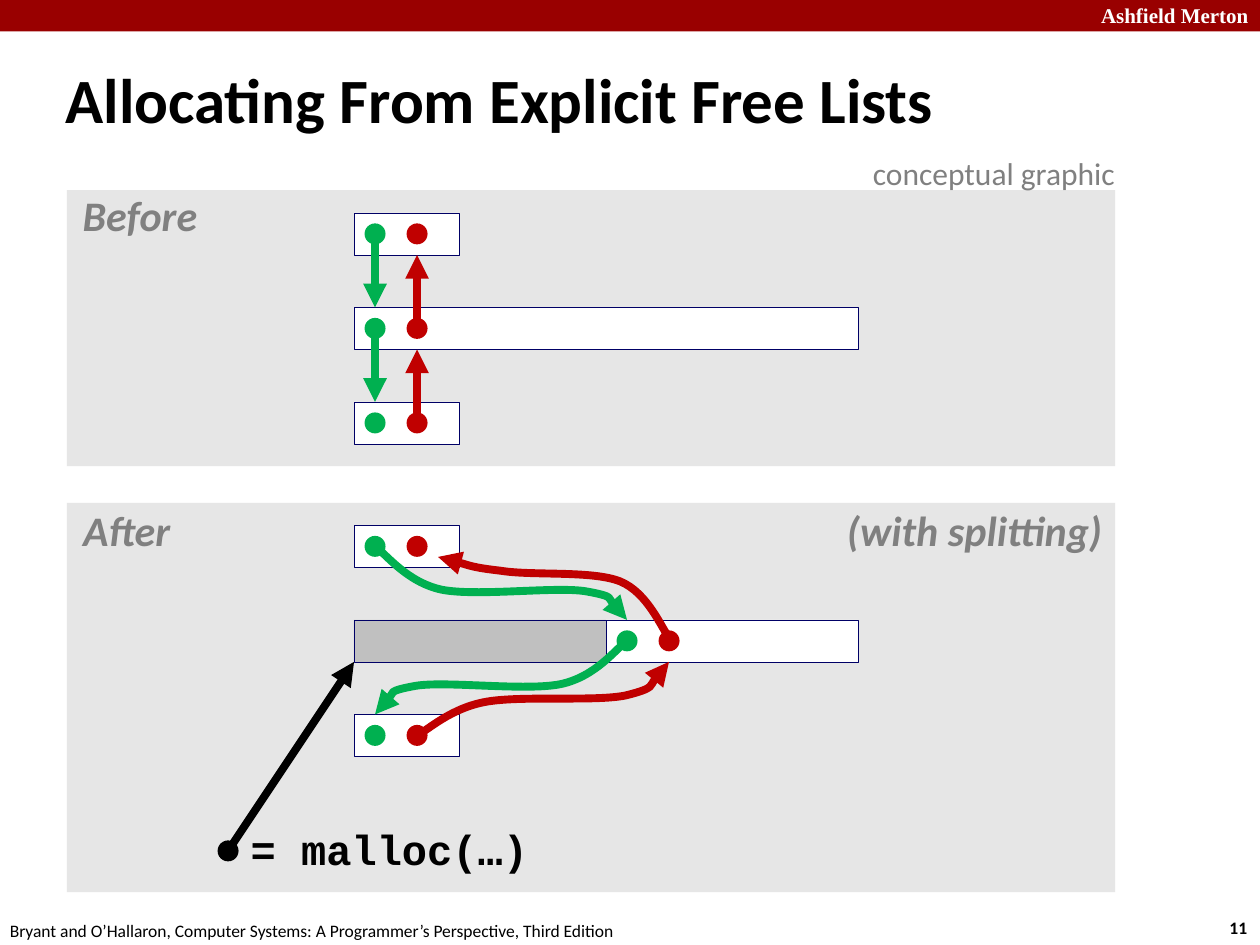
from dataclasses import dataclass

import lxml.etree
import pptx
import pptx.dml.color
import pptx.enum.shapes
import pptx.enum.text
import pptx.oxml
import pptx.oxml.ns
import pptx.util

RGBColor = pptx.dml.color.RGBColor
Inches = pptx.util.Inches
Shape = pptx.enum.shapes.MSO_SHAPE
Align = pptx.enum.text.PP_ALIGN
qn = pptx.oxml.ns.qn

BANNER = RGBColor(0x99, 0x00, 0x00)
PANEL = RGBColor(0xE6, 0xE6, 0xE6)
ALLOCATED = RGBColor(0xC0, 0xC0, 0xC0)
LABEL = RGBColor(0x80, 0x80, 0x80)
BORDER = RGBColor(0x00, 0x00, 0x66)
NEXT = RGBColor(0x00, 0xB0, 0x50)
PREVIOUS = RGBColor(0xC0, 0x00, 0x00)
BLACK = RGBColor(0, 0, 0)
WHITE = RGBColor(255, 255, 255)

CELL = 1 / 3
ROW_STEP = 2.25
NEXT_COLUMN, PREVIOUS_COLUMN = 0.5, 1.5
SMALL_BLOCK, LARGE_BLOCK, HALF_BLOCK = 2.5, 12, 6


@dataclass(frozen=True)
class Grid:
    left: float
    top: float

    def x(self, column: float) -> int:
        return Inches(self.left + column * CELL)

    def y(self, row: float) -> int:
        return Inches(self.top + row * CELL)


@dataclass(frozen=True)
class Label:
    text: str
    left: float
    top: float
    width: float
    height: float
    size: float
    color: RGBColor
    font: str = "Calibri"
    bold: bool = False
    italic: bool = False
    inset: float = 0.05
    spacing: float = 0.9
    align: Align = Align.CENTER


BEFORE = Grid(2.81, 1.69)
AFTER = Grid(2.81, 4.17)

CURVES = [
    (NEXT, [(0.5, 0.5), (0.75, 0.67), (1.25, 1.35), (2.08, 1.53), (2.92, 1.7),
            (4.8, 1.45), (5.52, 1.57), (6.25, 1.7), (6.3, 2.1), (6.5, 2.25)]),
    (NEXT, [(6.5, 2.75), (6.25, 2.92), (5.77, 3.6), (4.92, 3.78), (4.08, 3.95),
            (2.2, 3.7), (1.47, 3.82), (0.75, 3.95), (0.7, 4.35), (0.5, 4.5)]),
    (PREVIOUS, [(7.52, 2.7), (7.33, 2.47), (7, 1.6), (6.33, 1.33), (5.67, 1.07),
                (4.23, 1.2), (3.5, 1.08), (2.8, 1), (2.3, 0.82), (2, 0.75)]),
    (PREVIOUS, [(1.5, 5), (1.77, 4.87), (2.3, 4.35), (3.15, 4.2), (4, 4.05),
                (5.75, 4.2), (6.47, 4.05), (7.2, 3.87), (7.3, 3.42), (7.5, 3.25)]),
]

PLAIN = dict(inset=0.1, spacing=1.0, align=Align.LEFT)
PANEL_LABEL = dict(size=24, color=LABEL, bold=True, italic=True)
LABELS = [
    Label("Ashfield Merton", 8.64, -0.03, 1.43, 0.3, 12, WHITE, "Times New Roman", True, **PLAIN),
    Label("11", 9.66, 7.23, 0.37, 0.27, 10, BLACK, bold=True, **PLAIN),
    Label("Bryant and O’Hallaron, Computer Systems: A Programmer’s Perspective, Third Edition",
          -0.02, 7.25, 5.08, 0.27, 10, BLACK, **PLAIN),
    Label("conceptual graphic", 6.83, 1.17, 2.17, 0.4, 18, LABEL, **PLAIN),
    Label("Before", 0.6, 1.5, 1.02, 0.47, **PANEL_LABEL),
    Label("After", 0.6, 4, 0.81, 0.47, **PANEL_LABEL),
    Label("(with splitting)", 6.66, 4, 2.15, 0.47, **PANEL_LABEL),
    Label("= malloc(…)", 1.93, 6.53, 2.32, 0.47, 24, BLACK, "Courier New", True),
]


def add_filled(page, kind: Shape, left: int, top: int, width: int, height: int,
               color: RGBColor, bordered: bool = False) -> None:
    shape = page.shapes.add_shape(kind, left, top, width, height)
    shape.shadow.inherit = False
    shape.fill.solid()
    shape.fill.fore_color.rgb = color
    if bordered:
        shape.line.color.rgb = BORDER
        shape.line.width = pptx.util.Pt(0.25)
    else:
        shape.line.fill.background()


def add_panel(page, left: float, top: float, width: float, height: float, color: RGBColor) -> None:
    add_filled(page, Shape.RECTANGLE, Inches(left), Inches(top), Inches(width), Inches(height), color)


def add_block(page, grid: Grid, column: float, row: int, columns: float,
              color: RGBColor = WHITE) -> None:
    add_filled(page, Shape.RECTANGLE, grid.x(column), grid.y(row * ROW_STEP),
               Inches(columns * CELL), Inches(CELL), color, bordered=True)


def add_dot(page, grid: Grid, column: float, row: float, color: RGBColor) -> None:
    size = Inches(CELL / 2)
    add_filled(page, Shape.OVAL, grid.x(column - 0.25), grid.y(row - 0.25), size, size, color)


def add_pointers(page, grid: Grid, row: int, offset: float = 0) -> None:
    middle = row * ROW_STEP + 0.5
    add_dot(page, grid, offset + NEXT_COLUMN, middle, NEXT)
    add_dot(page, grid, offset + PREVIOUS_COLUMN, middle, PREVIOUS)


def style_arrow(arrow, color: RGBColor) -> None:
    arrow.line.color.rgb = color
    arrow.line.width = pptx.util.Pt(4.5)
    lxml.etree.SubElement(arrow.line._get_or_add_ln(), qn("a:tailEnd"), type="triangle")


def add_arrow(page, grid: Grid, start: tuple, end: tuple, color: RGBColor) -> None:
    arrow = page.shapes.add_connector(pptx.enum.shapes.MSO_CONNECTOR.STRAIGHT,
                                      grid.x(start[0]), grid.y(start[1]),
                                      grid.x(end[0]), grid.y(end[1]))
    style_arrow(arrow, color)
    lxml.etree.SubElement(arrow._element.spPr, qn("a:effectLst"))


def add_curve(page, grid: Grid, points: list, color: RGBColor) -> None:
    start, *controls = [(grid.x(column), grid.y(row)) for column, row in points]
    builder = page.shapes.build_freeform(*start)
    builder.add_line_segments(controls, close=False)
    curve = builder.convert_to_shape()
    curve.shadow.inherit = False
    curve.fill.background()
    style_arrow(curve, color)
    segments = list(curve._element.iter(qn("a:lnTo")))
    outline = segments[0].getparent()
    for first in range(0, len(segments), 3):
        bezier = lxml.etree.SubElement(outline, qn("a:cubicBezTo"))
        for segment in segments[first:first + 3]:
            bezier.append(segment[0])
            outline.remove(segment)


def add_label(page, label: Label) -> None:
    box = page.shapes.add_textbox(Inches(label.left), Inches(label.top),
                                  Inches(label.width), Inches(label.height))
    frame = box.text_frame
    frame.word_wrap = False
    frame.auto_size = pptx.enum.text.MSO_AUTO_SIZE.SHAPE_TO_FIT_TEXT
    frame.margin_left = frame.margin_right = Inches(label.inset)
    frame.margin_top = frame.margin_bottom = Inches(0.05)
    para = frame.paragraphs[0]
    para.text = label.text
    para.alignment = label.align
    para.line_spacing = label.spacing
    style_font(para.font, label.font, label.size, label.color, label.bold, label.italic)


def style_font(font, name: str, size: float, color: RGBColor, bold: bool, italic: bool = False) -> None:
    font.name, font.size, font.bold, font.italic = name, pptx.util.Pt(size), bold, italic
    font.color.rgb = color


def add_title(page) -> None:
    title = page.shapes.title
    title.left, title.top, title.width, title.height = map(Inches, (0.42, 0.51, 8.75, 0.63))
    frame = title.text_frame
    frame.auto_size = pptx.enum.text.MSO_AUTO_SIZE.NONE
    frame.vertical_anchor = pptx.enum.text.MSO_ANCHOR.MIDDLE
    para = frame.paragraphs[0]
    para.text = "Allocating From Explicit Free Lists"
    para.alignment = Align.LEFT
    para.line_spacing = 0.87
    style_font(para.font, "Calibri", 36, BLACK, True)


def draw_before(page) -> None:
    add_panel(page, 0.53, 1.51, 8.32, 2.19, PANEL)
    for row, columns in enumerate((SMALL_BLOCK, LARGE_BLOCK, SMALL_BLOCK)):
        add_block(page, BEFORE, 0, row, columns)
        add_pointers(page, BEFORE, row)
    for row in range(2):
        top, below = row * ROW_STEP, (row + 1) * ROW_STEP
        add_arrow(page, BEFORE, (NEXT_COLUMN, top + 0.5), (NEXT_COLUMN, below), NEXT)
        add_arrow(page, BEFORE, (PREVIOUS_COLUMN, below + 0.5), (PREVIOUS_COLUMN, top + 1), PREVIOUS)


def draw_after(page) -> None:
    add_panel(page, 0.53, 3.99, 8.32, 3.09, PANEL)
    for row in (0, 2):
        add_block(page, AFTER, 0, row, SMALL_BLOCK)
        add_pointers(page, AFTER, row)
    add_block(page, AFTER, HALF_BLOCK, 1, HALF_BLOCK)
    add_block(page, AFTER, 0, 1, HALF_BLOCK, ALLOCATED)
    add_pointers(page, AFTER, 1, HALF_BLOCK)
    add_dot(page, AFTER, -3, 7.75, BLACK)
    add_arrow(page, AFTER, (-3, 7.75), (0, 3.25), BLACK)
    for color, points in CURVES:
        add_curve(page, AFTER, points, color)


def main() -> None:
    deck = pptx.Presentation()
    deck.slide_width, deck.slide_height = Inches(10), Inches(7.5)
    page = deck.slides.add_slide(deck.slide_layouts[5])
    add_title(page)
    add_panel(page, 0, 0, 10, 0.25, BANNER)
    draw_before(page)
    draw_after(page)
    for label in LABELS:
        add_label(page, label)
    deck.save("out.pptx")


if __name__ == "__main__":
    main()
